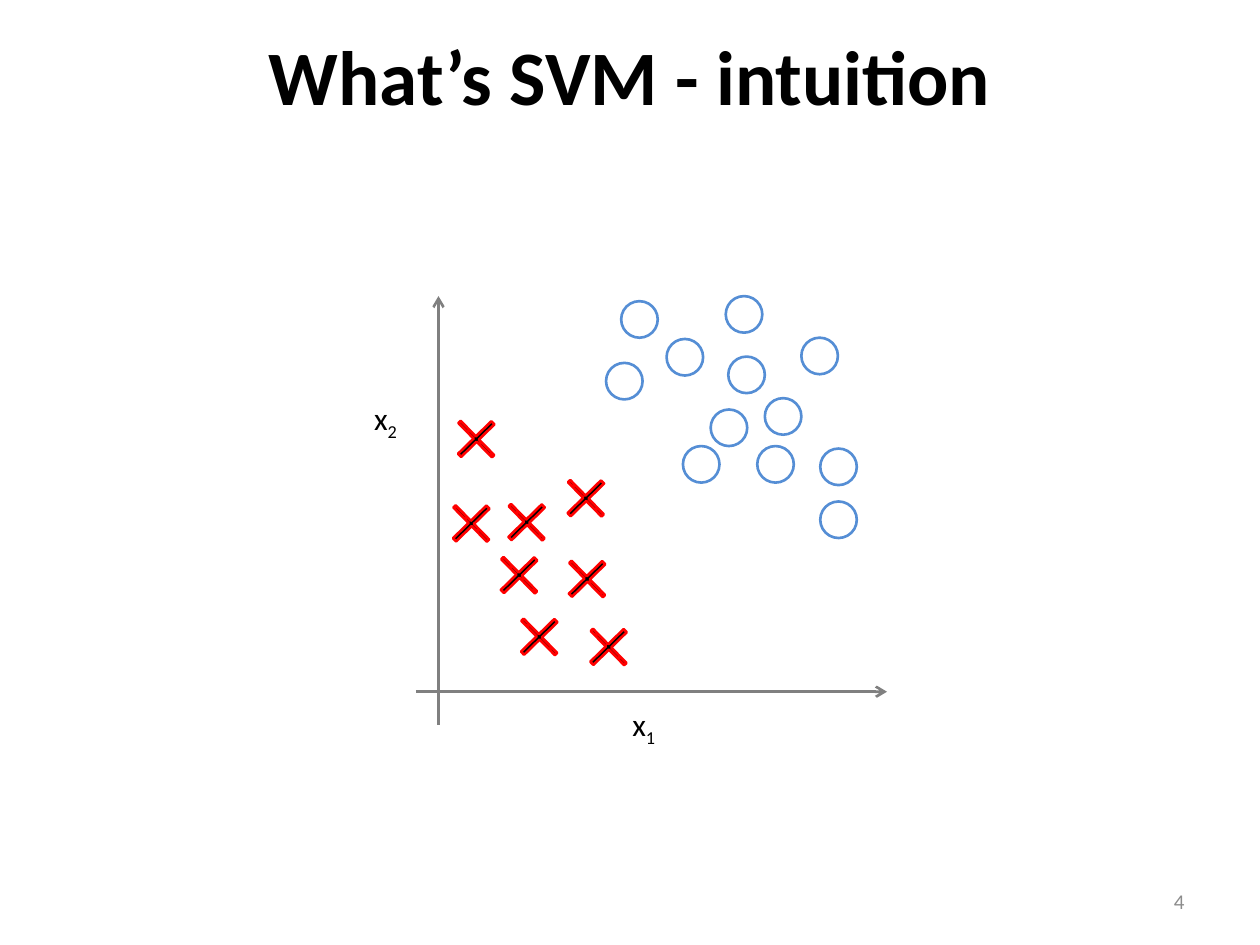
from lxml import etree
from pptx import Presentation
from pptx.dml.color import RGBColor
from pptx.enum.shapes import MSO_CONNECTOR, MSO_SHAPE
from pptx.enum.text import MSO_ANCHOR, MSO_AUTO_SIZE, PP_ALIGN
from pptx.oxml.ns import qn
from pptx.util import Inches, Pt

LEFT, CENTER, RIGHT = PP_ALIGN.LEFT, PP_ALIGN.CENTER, PP_ALIGN.RIGHT
TOP, MIDDLE = MSO_ANCHOR.TOP, MSO_ANCHOR.MIDDLE
CIRCLE, CROSS = MSO_SHAPE.OVAL, MSO_SHAPE.CROSS
STRAIGHT = MSO_CONNECTOR.STRAIGHT
FIT_SHAPE = MSO_AUTO_SIZE.SHAPE_TO_FIT_TEXT

FONT = "Calibri"
COLORS = {
    "text": "000000",
    "page_number": "8C8C8C",
    "axis": "808080",
    "circle": "558ED5",
    "cross_line": "FF0000",
    "cross_fill": "000000",
}
LINE_WIDTH = Pt(1.5)

CIRCLE_SIZE = (0.29, 0.29)
CROSS_SIZE = (0.38, 0.37)
CIRCLE_POINTS = [
    (6.51, 3.98), (5.29, 2.69), (4.93, 2.39), (6.01, 3.54),
    (6.51, 3.56), (5.64, 3.25), (6.07, 3.16), (4.81, 2.88),
    (5.42, 3.54), (5.78, 2.83), (6.36, 2.68), (5.76, 2.35),
]
CROSS_POINTS = [
    (4.09, 4.87), (4.46, 3.77), (4.47, 4.41), (3.93, 4.38),
    (4.64, 4.95), (3.99, 3.96), (3.59, 3.30), (3.55, 3.97),
]


def rgb(name):
    return RGBColor.from_string(COLORS[name])


def add_text(page, text, left, top, width, height, *, size=18, color="text",
             bold=False, align=LEFT, anchor=TOP, wrap=True, subscript=""):
    box = page.shapes.add_textbox(
        Inches(left), Inches(top), Inches(width), Inches(height))
    frame = box.text_frame
    frame.word_wrap = wrap
    frame.vertical_anchor = anchor
    if not wrap:
        frame.auto_size = FIT_SHAPE
    para = frame.paragraphs[0]
    para.alignment = align
    for part in filter(None, (text, subscript)):
        span = para.add_run()
        span.text = part
        span.font.name = FONT
        span.font.size = Pt(size)
        span.font.bold = bold
        span.font.color.rgb = rgb(color)
    if subscript:
        span._r.get_or_add_rPr().set("baseline", "-25000")


def add_marker(page, kind, point, size, line_color):
    marker = page.shapes.add_shape(kind, *map(Inches, point + size))
    marker.shadow.inherit = False
    marker.fill.background()
    marker.line.color.rgb = rgb(line_color)
    marker.line.width = LINE_WIDTH
    return marker


def add_cross(page, point):
    cross = add_marker(page, CROSS, point, CROSS_SIZE, "cross_line")
    cross.adjustments[0] = 0.466
    cross.rotation = 45.6
    cross.fill.solid()
    cross.fill.fore_color.rgb = rgb("cross_fill")


def add_axis(page, start, end):
    axis = page.shapes.add_connector(STRAIGHT, *map(Inches, start + end))
    axis.line.color.rgb = rgb("axis")
    axis.line.width = LINE_WIDTH
    etree.SubElement(axis.line._get_or_add_ln(), qn("a:tailEnd"), type="arrow")
    etree.SubElement(axis._element.spPr, qn("a:effectLst"))


def main():
    deck = Presentation()
    deck.slide_width, deck.slide_height = Inches(10), Inches(7.5)
    page = deck.slides.add_slide(deck.slide_layouts[6])

    add_text(page, "What’s SVM - intuition", 0, -0.03, 10, 1.25,
             size=44, bold=True, align=CENTER, anchor=MIDDLE)
    add_text(page, "4", 7.17, 6.95, 2.33, 0.4, size=12,
             color="page_number", align=RIGHT, anchor=MIDDLE)

    add_axis(page, (3.48, 5.75), (3.48, 2.35))
    add_axis(page, (3.3, 5.49), (7.04, 5.49))
    add_text(page, "x", 2.87, 3.12, 0.61, 0.63, wrap=False, subscript="2")
    add_text(page, "x", 4.92, 5.55, 0.4, 0.4, wrap=False, subscript="1")

    for point in CIRCLE_POINTS:
        add_marker(page, CIRCLE, point, CIRCLE_SIZE, "circle")
    for point in CROSS_POINTS:
        add_cross(page, point)

    deck.save("out.pptx")


if __name__ == "__main__":
    main()
